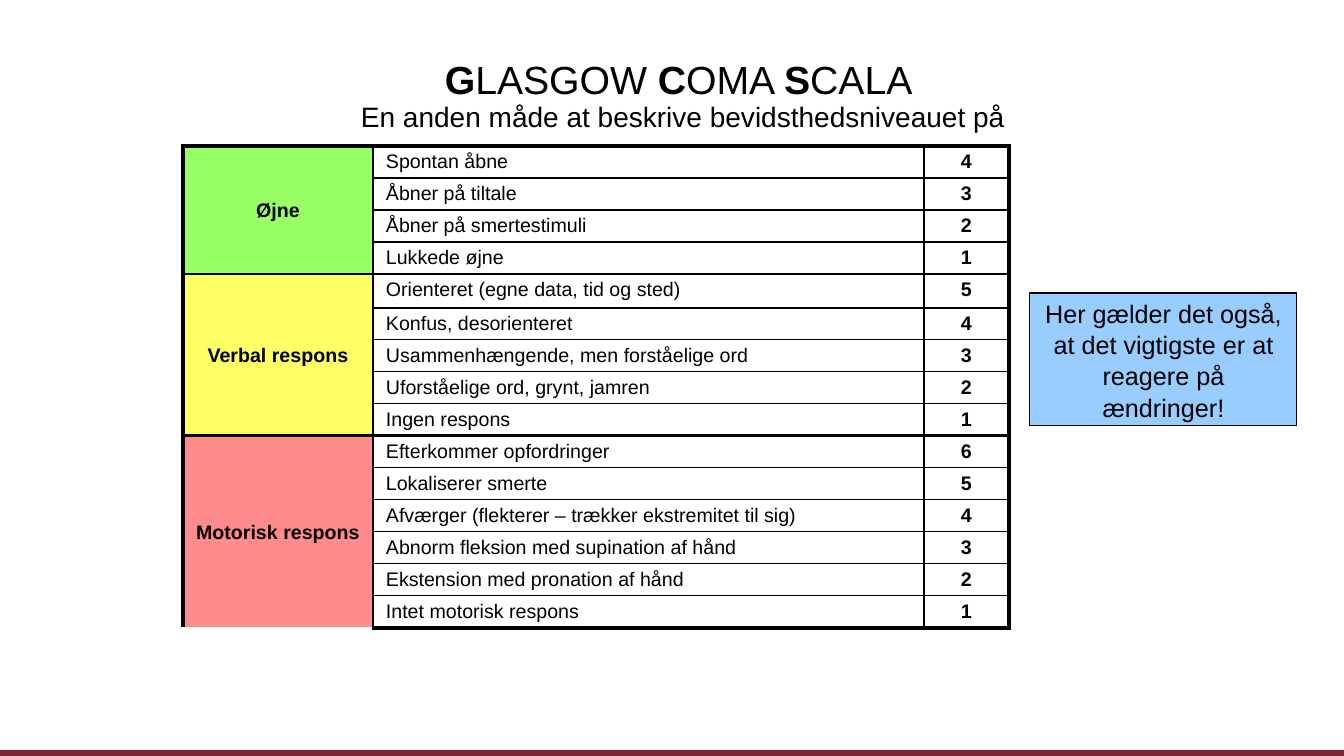
from lxml.etree import SubElement
from pptx import Presentation
from pptx.dml.color import RGBColor
from pptx.enum.shapes import MSO_SHAPE
from pptx.enum.text import MSO_ANCHOR, MSO_AUTO_SIZE, PP_ALIGN
from pptx.oxml.ns import qn
from pptx.util import Pt

SLIDE_WIDTH, SLIDE_HEIGHT = 1344, 756
EMU_PER_PX = 12192000 / SLIDE_WIDTH

SCALE_GROUPS = [
    ("Øjne", "99FF66", [
        "Spontan åbne", "Åbner på tiltale", "Åbner på smertestimuli", "Lukkede øjne"]),
    ("Verbal respons", "FFFF66", [
        "Orienteret (egne data, tid og sted)", "Konfus, desorienteret",
        "Usammenhængende, men forståelige ord", "Uforståelige ord, grynt, jamren",
        "Ingen respons"]),
    ("Motorisk respons", "FF8C8C", [
        "Efterkommer opfordringer", "Lokaliserer smerte",
        "Afværger (flekterer – trækker ekstremitet til sig)",
        "Abnorm fleksion med supination af hånd", "Ekstension med pronation af hånd",
        "Intet motorisk respons"]),
]
COLUMN_WIDTHS = [190, 551, 85]
ROW_HEIGHT, TALL_ROW, TALL_ROW_HEIGHT = 32, 4, 34
OUTER, MIDDLE, THIN = 3, 2.25, 1


def px(length):
    return round(length * EMU_PER_PX)


def color(value):
    return RGBColor.from_string(value)


def write(paragraph, text, size=14, bold=False, align=PP_ALIGN.CENTER, spacing=None):
    paragraph.alignment = align
    if spacing:
        paragraph.line_spacing = spacing
    run = paragraph.add_run()
    run.text = text
    run.font.name = "Arial"
    run.font.size = Pt(size)
    run.font.bold = bold
    run.font.color.rgb = color("000000")


def add_box(slide, box, fill, line=None):
    shape = slide.shapes.add_shape(MSO_SHAPE.RECTANGLE, *map(px, box))
    shape.shadow.inherit = False
    shape.fill.solid()
    shape.fill.fore_color.rgb = color(fill)
    if line:
        shape.line.color.rgb = color(line)
        shape.line.width = Pt(0.75)
    else:
        shape.line.fill.background()
    return shape


def add_title(slide, box):
    title = slide.shapes.title
    title.left, title.top, title.width, title.height = map(px, box)
    frame = title.text_frame
    frame.word_wrap = True
    frame.auto_size = MSO_AUTO_SIZE.NONE
    frame.vertical_anchor = MSO_ANCHOR.MIDDLE
    for initial, rest in [("G", "LASGOW "), ("C", "OMA "), ("S", "CALA ")]:
        write(frame.paragraphs[0], initial, size=28, bold=True, spacing=0.9)
        write(frame.paragraphs[0], rest, size=28, spacing=0.9)
    write(frame.add_paragraph(), "En anden måde at beskrive bevidsthedsniveauet på",
          size=20, spacing=0.9)


def format_cell(cell, fill, borders):
    cell.margin_left = cell.margin_right = px(13)
    cell.margin_top, cell.margin_bottom = px(5), px(4)
    properties = cell._tc.get_or_add_tcPr()
    for side, width in zip("LRTB", borders):
        if width:
            line = SubElement(properties, qn(f"a:ln{side}"), w=str(Pt(width)))
            solid = SubElement(line, qn("a:solidFill"))
            SubElement(solid, qn("a:srgbClr"), val="000000")
    cell.fill.solid()
    cell.fill.fore_color.rgb = color(fill)


def add_scale_table(slide, left, top):
    row_count = sum(len(answers) for _, _, answers in SCALE_GROUPS)
    heights = [ROW_HEIGHT] * row_count
    heights[TALL_ROW] = TALL_ROW_HEIGHT
    box = left, top, sum(COLUMN_WIDTHS), sum(heights)
    table = slide.shapes.add_table(row_count, len(COLUMN_WIDTHS), *map(px, box)).table
    table.first_row = table.horz_banding = False
    for column, width in zip(table.columns, COLUMN_WIDTHS):
        column.width = px(width)
    for row, height in zip(table.rows, heights):
        row.height = px(height)

    start = 0
    for name, fill, answers in SCALE_GROUPS:
        end = start + len(answers) - 1
        for row, answer in enumerate(answers, start):
            for column in range(3):
                inner = THIN if column else None
                above = MIDDLE if row == start else inner
                below = MIDDLE if row == end else inner
                borders = (OUTER if column == 0 else MIDDLE,
                           OUTER if column == 2 else MIDDLE,
                           OUTER if row == 0 else above,
                           OUTER if row == row_count - 1 else below)
                format_cell(table.cell(row, column), "FFFFFF" if column else fill, borders)
            write(table.cell(row, 1).text_frame.paragraphs[0], answer, align=PP_ALIGN.LEFT)
            write(table.cell(row, 2).text_frame.paragraphs[0], str(end - row + 1), bold=True)
        heading = table.cell(start, 0)
        heading.merge(table.cell(end, 0))
        heading.vertical_anchor = MSO_ANCHOR.MIDDLE
        write(heading.text_frame.paragraphs[0], name, bold=True)
        start = end + 1


def add_callout(slide, box):
    frame = add_box(slide, box, "99CCFF", line="000000").text_frame
    frame.word_wrap = True
    frame.vertical_anchor = MSO_ANCHOR.MIDDLE
    write(frame.paragraphs[0],
          "Her gælder det også, at det vigtigste er at reagere på ændringer!",
          size=18, spacing=1.04)


def main():
    presentation = Presentation()
    presentation.slide_width, presentation.slide_height = px(SLIDE_WIDTH), px(SLIDE_HEIGHT)
    slide = presentation.slides.add_slide(presentation.slide_layouts[5])
    add_box(slide, (0, SLIDE_HEIGHT - 6, SLIDE_WIDTH, 6), "822433")
    add_scale_table(slide, 183, 146)
    add_title(slide, (84, 30, 1198, 134))
    add_callout(slide, (1030, 293, 267, 133))
    presentation.save("out.pptx")


if __name__ == "__main__":
    main()
